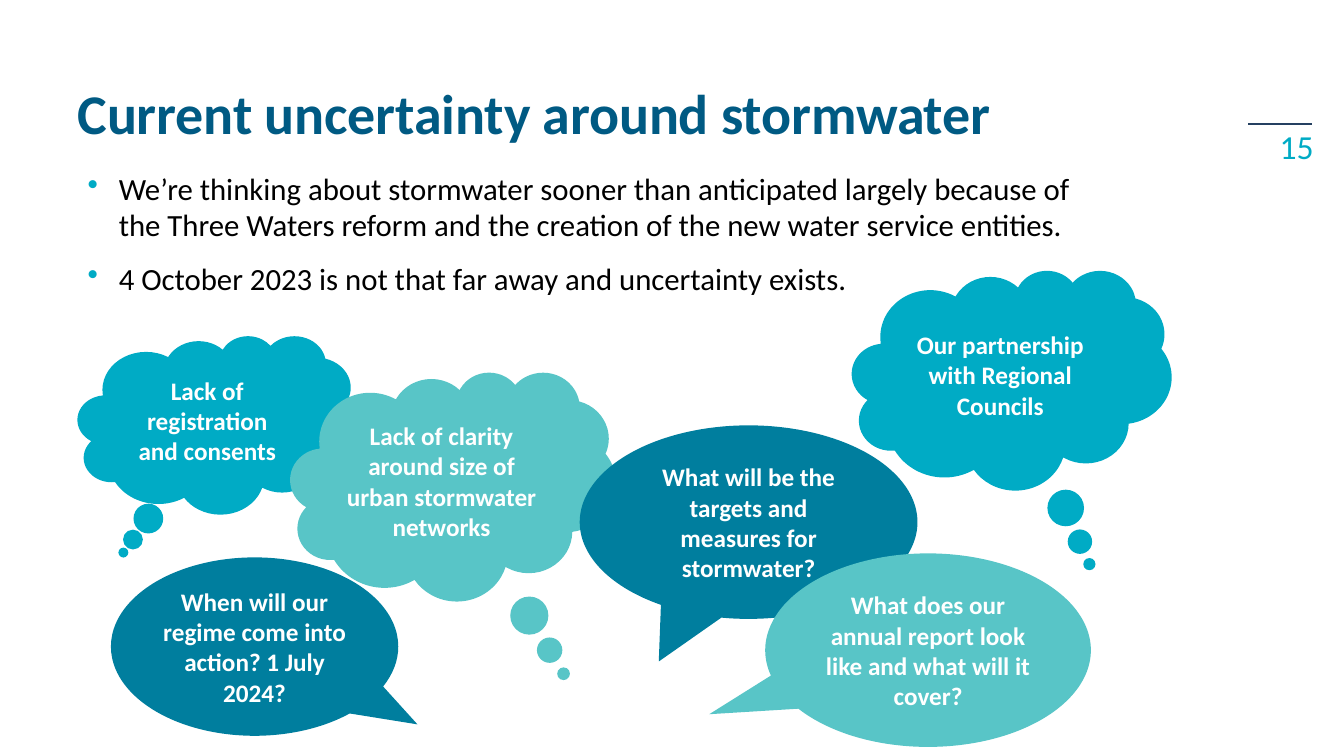
from dataclasses import dataclass

from lxml import etree
from pptx import Presentation
from pptx.dml.color import RGBColor
from pptx.enum.shapes import MSO_CONNECTOR, MSO_SHAPE
from pptx.enum.text import MSO_ANCHOR, PP_ALIGN
from pptx.oxml.ns import qn
from pptx.util import Inches, Pt

CLOUD = MSO_SHAPE.CLOUD_CALLOUT
OVAL = MSO_SHAPE.OVAL_CALLOUT
LINE = MSO_CONNECTOR.STRAIGHT
LEFT, MID, RIGHT = PP_ALIGN.LEFT, PP_ALIGN.CENTER, PP_ALIGN.RIGHT
TOP, CENTER = MSO_ANCHOR.TOP, MSO_ANCHOR.MIDDLE

FONT = "Calibri"
NAVY, BLUE, CYAN, AQUA = "005A83", "007E9E", "00ABC5", "58C5C7"
WHITE, BLACK, RULE = "FFFFFF", "000000", "254061"


@dataclass
class Bubble:
    kind: MSO_SHAPE
    box: tuple[float, float, float, float]
    tail: tuple[float, float]
    fill: str
    text: str


BUBBLES = [
    Bubble(CLOUD, (0.77, 3.33, 2.77, 1.77), (-0.336, 0.716), CYAN,
           "Lack of registration and consents"),
    Bubble(CLOUD, (2.88, 3.69, 3.23, 2.27), (0.339, 0.819), AQUA,
           "Lack of clarity around size of urban stormwater networks"),
    Bubble(OVAL, (5.75, 4.22, 3.35, 1.92), (-0.266, 0.72), BLUE,
           "What will be the targets and measures for stormwater?"),
    Bubble(OVAL, (1.1, 5.53, 2.85, 1.77), (0.567, 0.436), BLUE,
           "When will our regime come into action? 1 July 2024?"),
    Bubble(OVAL, (7.59, 5.49, 3.23, 1.92), (-0.672, 0.331), AQUA,
           "What does our annual report look like and what will it cover?"),
    Bubble(CLOUD, (8.45, 2.68, 3.17, 2.18), (0.243, 0.838), CYAN,
           "Our partnership with Regional Councils"),
]

POINTS = [
    "We’re thinking about stormwater sooner than anticipated largely because of "
    "the Three Waters reform and the creation of the new water service entities.",
    "4 October 2023 is not that far away and uncertainty exists.",
]


def color(code: str) -> RGBColor:
    return RGBColor.from_string(code)


def add_bullet(para, tint: str) -> None:
    props = para._p.get_or_add_pPr()
    props.set("marL", str(Inches(0.31)))
    props.set("indent", str(-Inches(0.31)))
    paint = etree.SubElement(props, qn("a:buClr"))
    etree.SubElement(paint, qn("a:srgbClr"), val=tint)
    etree.SubElement(props, qn("a:buChar"), char="•")


def put_text(shape, *lines: str, size: float, tint: str, bold: bool = False,
             align: PP_ALIGN = LEFT, anchor: MSO_ANCHOR = TOP,
             inset: bool = True, bullet: str = "", gap: float = 0,
             track: float = 0) -> None:
    frame = shape.text_frame
    frame.word_wrap = True
    frame.vertical_anchor = anchor
    if not inset:
        frame.margin_left = frame.margin_right = 0
        frame.margin_top = frame.margin_bottom = 0
    for i, line in enumerate(lines):
        para = frame.add_paragraph() if i else frame.paragraphs[0]
        para.alignment = align
        if i:
            para.space_before = Pt(gap)
        if bullet:
            add_bullet(para, bullet)
        run = para.add_run()
        run.text = line
        font = run.font
        font.name, font.size, font.bold = FONT, Pt(size), bold
        font.color.rgb = color(tint)
        if track:
            run._r.get_or_add_rPr().set("spc", str(round(track * 100)))


def add_box(slide, *box: float):
    return slide.shapes.add_textbox(*map(Inches, box))


def add_bubble(slide, item: Bubble) -> None:
    shape = slide.shapes.add_shape(item.kind, *map(Inches, item.box))
    shape.shadow.inherit = False
    shape.adjustments[0], shape.adjustments[1] = item.tail
    shape.fill.solid()
    shape.fill.fore_color.rgb = color(item.fill)
    shape.line.fill.background()
    put_text(shape, item.text, size=18, tint=WHITE, bold=True,
             align=MID, anchor=CENTER)


def add_rule(slide, left: float, right: float, top: float) -> None:
    rule = slide.shapes.add_connector(
        LINE, Inches(left), Inches(top), Inches(right), Inches(top))
    rule.line.color.rgb = color(RULE)
    rule.line.width = Pt(1)
    etree.SubElement(rule._element.spPr, qn("a:effectLst"))


def main() -> None:
    deck = Presentation()
    deck.slide_width, deck.slide_height = Inches(13.33), Inches(7.5)
    slide = deck.slides.add_slide(deck.slide_layouts[6])

    # Title and page number
    add_rule(slide, 12.38, 13.01, 1.23)
    put_text(add_box(slide, 0.77, 0.78, 10.16, 0.67),
             "Current uncertainty around stormwater",
             size=40, tint=NAVY, bold=True, inset=False, track=-0.1)
    put_text(add_box(slide, 12.08, 1.25, 0.95, 0.42), "15",
             size=24, tint=CYAN, align=RIGHT, inset=False)

    # Bullet points
    put_text(add_box(slide, 0.77, 1.63, 10.16, 1.95), *POINTS,
             size=22, tint=BLACK, bullet=CYAN, gap=12)

    # Thought and speech bubbles
    for item in BUBBLES:
        add_bubble(slide, item)

    deck.save("out.pptx")


if __name__ == "__main__":
    main()
